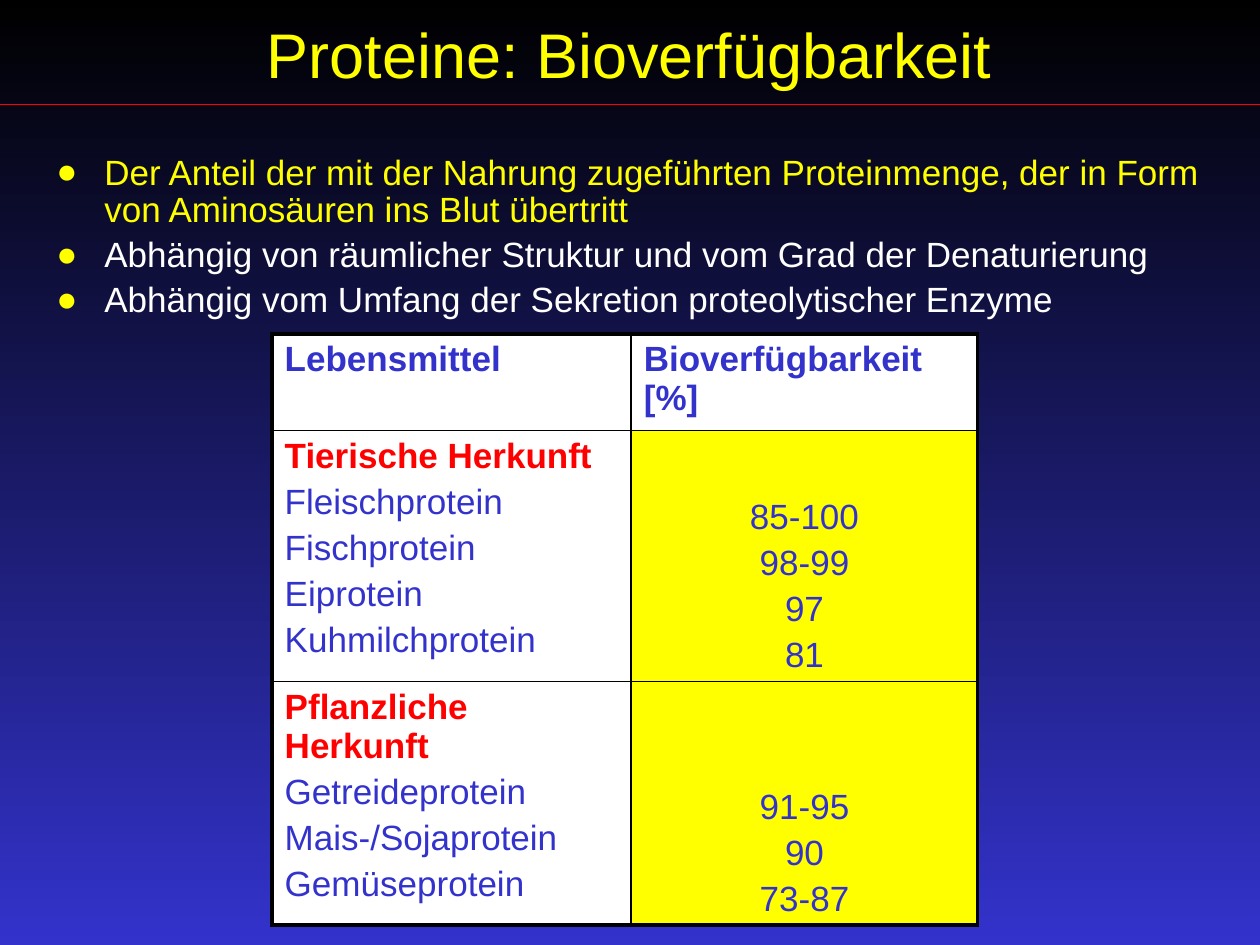
from pptx import Presentation
from pptx.dml.color import RGBColor
from pptx.enum.shapes import MSO_CONNECTOR as Connector
from pptx.enum.text import MSO_ANCHOR as Anchor, PP_ALIGN as Align
from pptx.oxml.ns import qn
from pptx.util import Inches, Pt
from lxml.etree import SubElement

BLACK, WHITE, YELLOW, RED, BLUE = "000000", "FFFFFF", "FFFF00", "FF0000", "3333CC"


def rgb(value):
    return RGBColor.from_string(value)


def add_run(paragraph, text, color, size=20, bold=False):
    run = paragraph.add_run()
    run.text = text
    run.font.name = "Arial"
    run.font.size = Pt(size)
    run.font.bold = bold
    run.font.color.rgb = rgb(color)


def add_paragraphs(frame, lines, align=Align.LEFT):
    for index, (text, color, bold) in enumerate(lines):
        paragraph = frame.add_paragraph() if index else frame.paragraphs[0]
        paragraph.alignment = align
        paragraph.space_before = Pt(4)
        add_run(paragraph, text, color, bold=bold)


def add_text_frame(slide, box, anchor):
    frame = slide.shapes.add_textbox(*map(Inches, box)).text_frame
    frame.word_wrap = True
    frame.vertical_anchor = anchor
    return frame


def set_background(slide):
    fill = slide.background.fill
    fill.gradient()
    fill.gradient_angle = 270
    for stop, color in zip(fill.gradient_stops, (BLACK, BLUE)):
        stop.color.rgb = rgb(color)


def add_title(slide, box):
    heading = add_text_frame(slide, box, Anchor.MIDDLE).paragraphs[0]
    heading.alignment = Align.CENTER
    add_run(heading, "Proteine: Bioverfügbarkeit", YELLOW, 36)


def add_rule(slide, left, top, width):
    rule = slide.shapes.add_connector(
        Connector.STRAIGHT, Inches(left), Inches(top), Inches(left + width), Inches(top))
    rule.line.color.rgb = rgb(RED)
    rule.line.width = Pt(0.75)
    SubElement(rule._element.spPr, qn("a:effectLst"))


def add_statements(slide, box):
    frame = add_text_frame(slide, box, Anchor.TOP)
    add_paragraphs(frame, [
        ("Der Anteil der mit der Nahrung zugeführten Proteinmenge, der in Form "
         "von Aminosäuren ins Blut übertritt", YELLOW, False),
        ("Abhängig von räumlicher Struktur und vom Grad der Denaturierung", WHITE, False),
        ("Abhängig vom Umfang der Sekretion proteolytischer Enzyme", WHITE, False),
    ])
    for paragraph in frame.paragraphs:
        paragraph.line_spacing = 0.9
        properties = paragraph._p.get_or_add_pPr()
        properties.set("marL", str(Inches(0.38)))
        properties.set("indent", str(-Inches(0.38)))
        bullet_color = SubElement(properties, qn("a:buClr"))
        SubElement(bullet_color, qn("a:srgbClr"), val=YELLOW)
        SubElement(properties, qn("a:buFont"), typeface="Arial")
        SubElement(properties, qn("a:buChar"), char="●")


def set_borders(cell, outer_sides):
    properties = cell._tc.get_or_add_tcPr()
    for side in "LRTB":
        width = Pt(2.25) if side in outer_sides else Pt(1)
        border = SubElement(properties, qn(f"a:ln{side}"), w=str(width))
        fill = SubElement(border, qn("a:solidFill"))
        SubElement(fill, qn("a:srgbClr"), val=BLACK)


def add_food_table(slide, box, column_widths, row_heights):
    groups = [
        ("Tierische Herkunft", [("Fleischprotein", "85-100"), ("Fischprotein", "98-99"),
                                ("Eiprotein", "97"), ("Kuhmilchprotein", "81")]),
        ("Pflanzliche Herkunft", [("Getreideprotein", "91-95"), ("Mais-/Sojaprotein", "90"),
                                  ("Gemüseprotein", "73-87")]),
    ]
    rows = [([("Lebensmittel", BLUE, True)], [("Bioverfügbarkeit [%]", BLUE, True)])]
    for origin, foods in groups:
        names = [(origin, RED, True)] + [(name, BLUE, False) for name, _ in foods]
        rows.append((names, [(share, BLUE, False) for _, share in foods]))

    table = slide.shapes.add_table(len(rows), 2, *map(Inches, box)).table
    for column, width in zip(table.columns, column_widths):
        column.width = Inches(width)
    for row, height in zip(table.rows, row_heights):
        row.height = Inches(height)

    for row_index, contents in enumerate(rows):
        vertical_edge = {0: "T", len(rows) - 1: "B"}.get(row_index, "")
        for column_index, lines in enumerate(contents):
            cell = table.cell(row_index, column_index)
            is_share = row_index > 0 and column_index == 1
            set_borders(cell, "LR"[column_index] + vertical_edge)
            cell.fill.solid()
            cell.fill.fore_color.rgb = rgb(YELLOW if is_share else WHITE)
            cell.vertical_anchor = Anchor.BOTTOM if is_share else Anchor.TOP
            add_paragraphs(cell.text_frame, lines, Align.CENTER if is_share else Align.LEFT)


def main():
    presentation = Presentation()
    presentation.slide_width = Inches(10)
    presentation.slide_height = Inches(7.5)
    slide = presentation.slides.add_slide(presentation.slide_layouts[6])
    set_background(slide)
    add_title(slide, (0.27, 0.13, 9.45, 0.59))
    add_rule(slide, 0, 0.83, 10)
    add_statements(slide, (0.35, 1.18, 9.37, 1.47))
    add_food_table(slide, (2.16, 2.65, 5.6, 4.46), (2.85, 2.75), (0.72, 1.87, 1.87))
    presentation.save("out.pptx")


if __name__ == "__main__":
    main()
